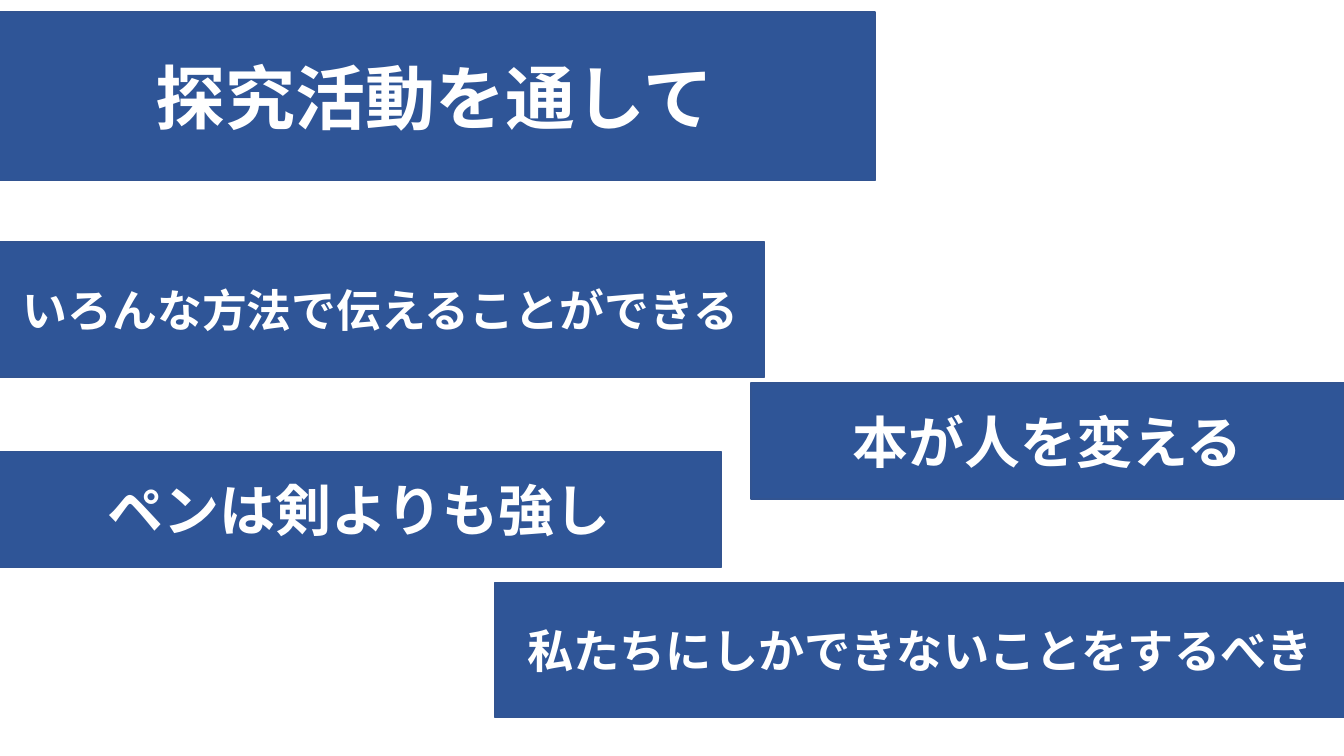
from lxml import etree
from pptx import Presentation
from pptx import util as u
from pptx.dml.color import RGBColor
from pptx.enum import shapes, text
from pptx.oxml.ns import qn

PX = 9144  # EMU per px, 100 px to the inch
FONT = "Noto Sans CJK JP"
WIDTH, HEIGHT = 1333, 750

# wording, font size, box (left, top, width, height)
BANNERS = [
    ("探究活動を通して", 50, (-5, 12, 873, 167)),
    ("いろんな方法で伝えることができる", 32, (-3, 240, 761, 134)),
    ("本が人を変える", 40, (745, 380, 588, 115)),
    ("私たちにしかできないことをするべき", 33, (491, 578, 843, 134)),
    ("ペンは剣よりも強し", 40, (-3, 448, 718, 115)),
]


def px(n):
    return u.Emu(n * PX)


def color(value):
    return RGBColor.from_string(value)


def write(tf, wording, size, fill="FFFFFF", bold=True):
    tf.word_wrap = True
    tf.vertical_anchor = text.MSO_ANCHOR.MIDDLE
    p = tf.paragraphs[0]
    p.alignment = text.PP_ALIGN.CENTER
    r = p.add_run()
    r.text = wording
    r.font.size = u.Pt(size)
    r.font.bold = bold
    r.font.color.rgb = color(fill)
    r.font.name = FONT
    # Japanese glyphs take the East Asian typeface
    latin = r.font._element.find(qn("a:latin"))
    ea = etree.Element(qn("a:ea"), typeface=FONT)
    latin.addnext(ea)


def add_banner(s, box, wording, size):
    sp = s.shapes.add_shape(shapes.MSO_SHAPE.FLOWCHART_PROCESS, *map(px, box))
    sp.shadow.inherit = False
    sp.fill.solid()
    sp.fill.fore_color.rgb = color("2F5597")
    sp.line.color.rgb = color("325491")
    sp.line.width = u.Pt(1)
    write(sp.text_frame, wording, size)


def main():
    prs = Presentation()
    prs.slide_width, prs.slide_height = px(WIDTH), px(HEIGHT)
    s = prs.slides.add_slide(prs.slide_layouts[6])
    for wording, size, box in BANNERS:
        add_banner(s, box, wording, size)
    prs.save("out.pptx")


if __name__ == "__main__":
    main()
